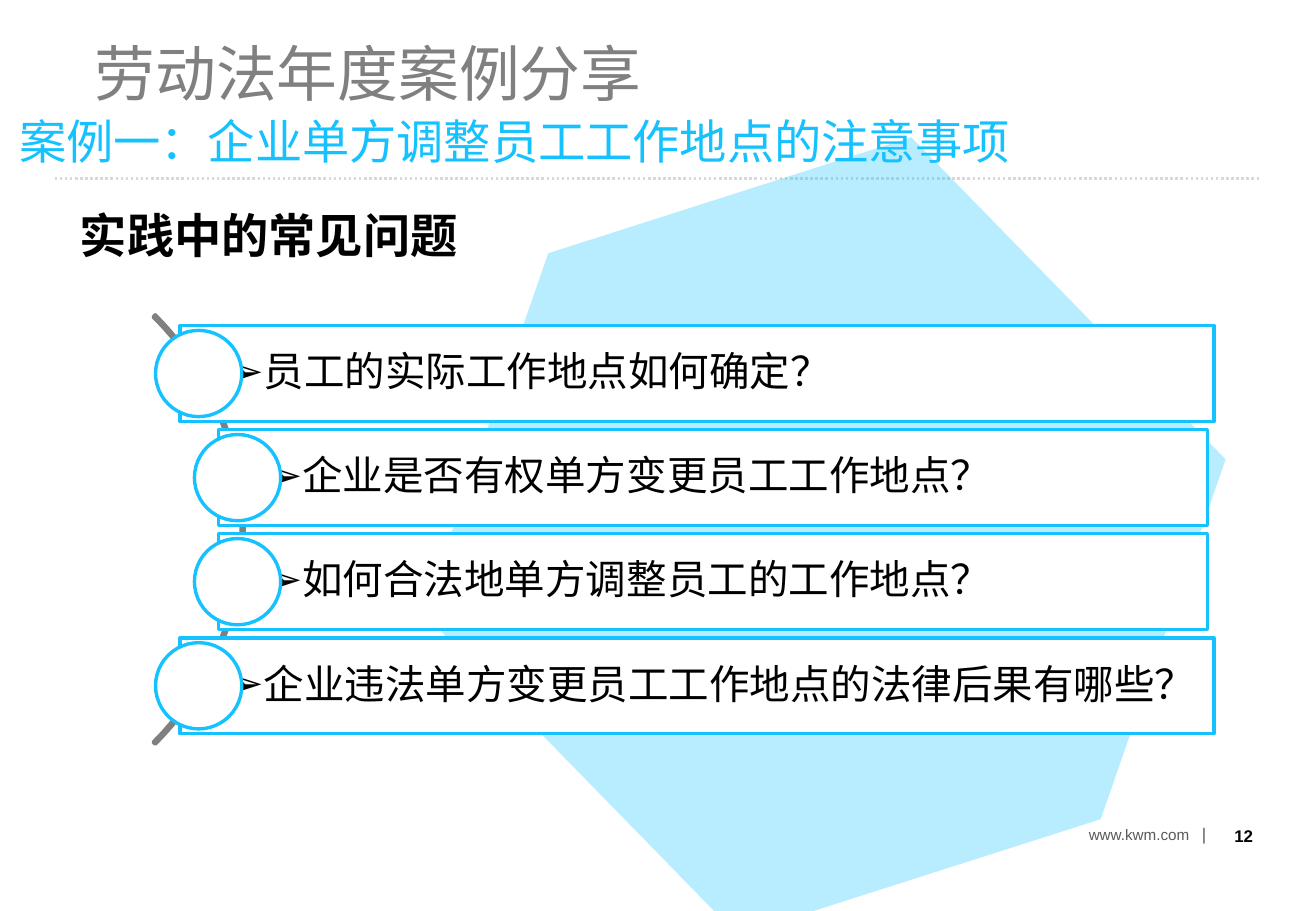
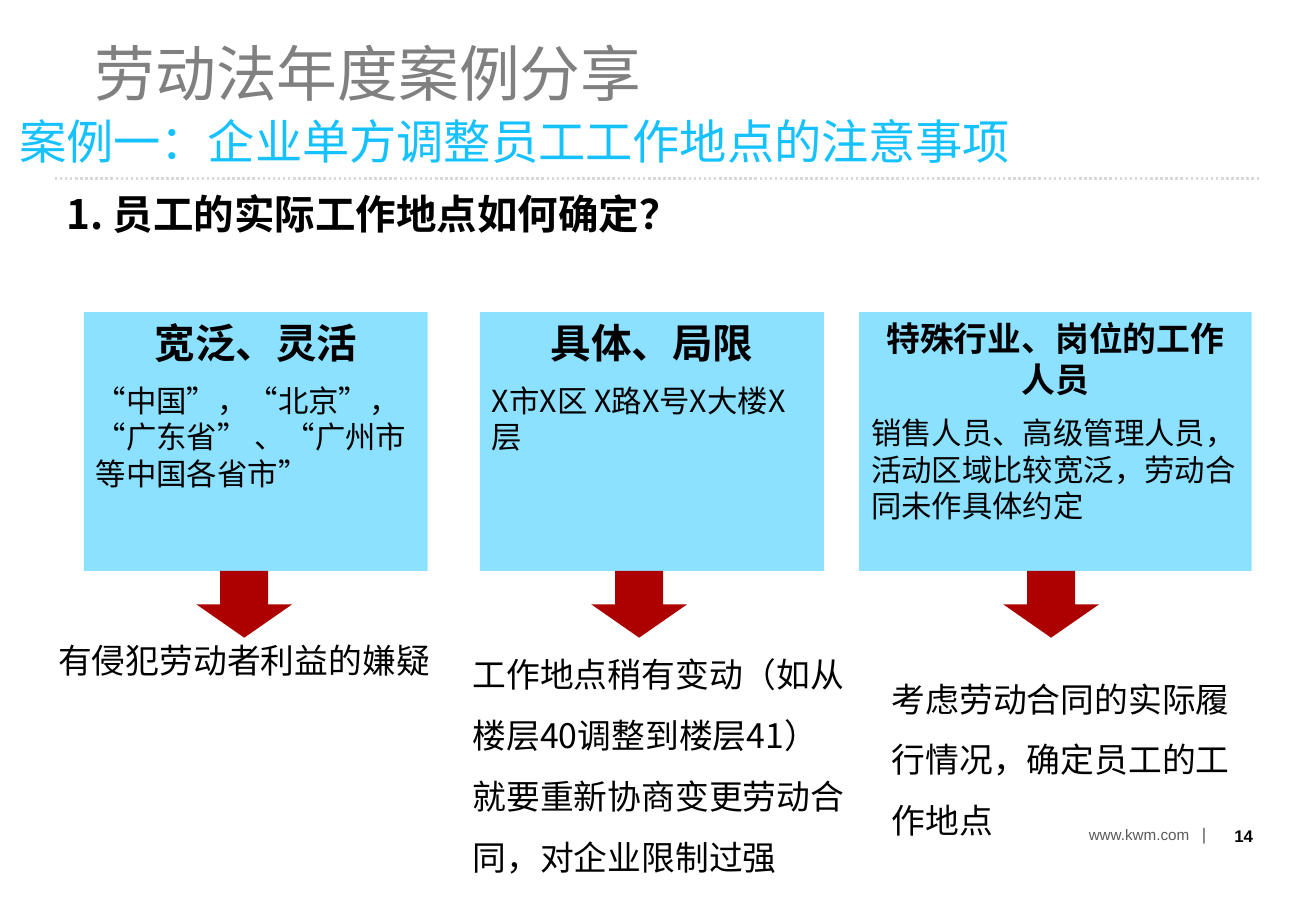
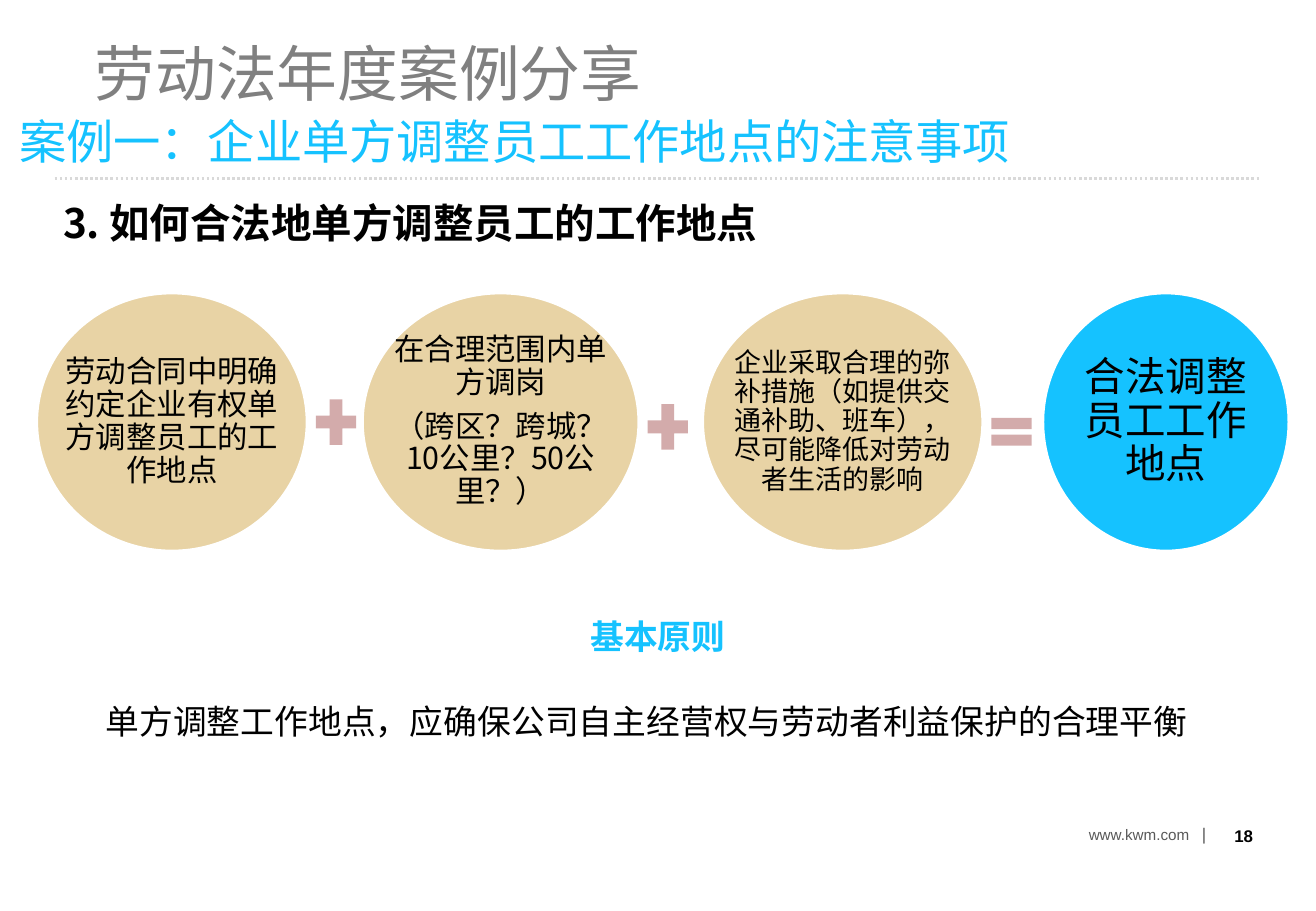
from lxml import etree
from pptx import Presentation
from pptx.dml.color import RGBColor
from pptx.enum.dml import MSO_LINE
from pptx.enum.shapes import MSO_CONNECTOR, MSO_SHAPE
from pptx.enum.text import MSO_ANCHOR, PP_ALIGN
from pptx.oxml.ns import qn
from pptx.util import Inches, Pt

RECTANGLE, OVAL, HEXAGON = MSO_SHAPE.RECTANGLE, MSO_SHAPE.OVAL, MSO_SHAPE.HEXAGON
BLOCK_ARC, DOWN_ARROW = MSO_SHAPE.BLOCK_ARC, MSO_SHAPE.DOWN_ARROW
PLUS, EQUAL = MSO_SHAPE.MATH_PLUS, MSO_SHAPE.MATH_EQUAL
STRAIGHT, DOTTED = MSO_CONNECTOR.STRAIGHT, MSO_LINE.ROUND_DOT
TOP, MIDDLE = MSO_ANCHOR.TOP, MSO_ANCHOR.MIDDLE
LEFT, CENTER, RIGHT = PP_ALIGN.LEFT, PP_ALIGN.CENTER, PP_ALIGN.RIGHT

CJK, LATIN = "Noto Sans CJK SC", "Arial"
BLACK, WHITE, GREY = "000000", "FFFFFF", "808080"
BLUE, PALE_BLUE = "15C2FF", "8BE1FF"
RED, SAND, PINK = "AD0101", "E8D3A5", "D3ABAB"
RULE_GREY, FOOTER_GREY = "D9D9D9", "595959"


def rgb(color):
    return RGBColor.from_string(color)


def apply(target, values):
    for name, value in values.items():
        setattr(target, name, value)


def run(text, size, color=BLACK, bold=False, font=CJK):
    return text, color, {"size": Pt(size), "bold": bold, "name": font}


def para(*runs, bullet=None, tab=None, **layout):
    return {"runs": runs, "bullet": bullet, "tab": tab,
            "layout": {"alignment": LEFT, **layout}}


def add_bullet(properties, bullet):
    indent = Inches(0.25)
    properties.set("marL", str(indent))
    properties.set("indent", str(-indent))
    etree.SubElement(properties, qn("a:buFont"), typeface=LATIN)
    etree.SubElement(properties, qn("a:buChar"), char=bullet)


def add_tab(properties, position):
    stops = etree.SubElement(properties, qn("a:tabLst"))
    etree.SubElement(stops, qn("a:tab"), pos=str(Inches(position)), algn="l")


def write(shape, paragraphs, anchor=TOP, insets=(0.1, 0.05, 0.1, 0.05)):
    frame = shape.text_frame
    sides = ("margin_left", "margin_top", "margin_right", "margin_bottom")
    apply(frame, {"word_wrap": True, "vertical_anchor": anchor,
                  **dict(zip(sides, map(Inches, insets)))})
    for index, content in enumerate(paragraphs):
        paragraph = frame.add_paragraph() if index else frame.paragraphs[0]
        properties = paragraph._p.get_or_add_pPr()
        if content["bullet"]:
            add_bullet(properties, content["bullet"])
        if content["tab"]:
            add_tab(properties, content["tab"])
        apply(paragraph, content["layout"])
        for text, color, font in content["runs"]:
            piece = paragraph.add_run()
            piece.text = text
            apply(piece.font, font)
            piece.font.color.rgb = rgb(color)
            etree.SubElement(piece._r.get_or_add_rPr(), qn("a:ea"),
                             typeface=font["name"])


def add_text(slide, box, *paragraphs, **frame):
    write(slide.shapes.add_textbox(*map(Inches, box)), paragraphs, **frame)


def add_block(slide, preset, box, fill=None, line=None):
    block = slide.shapes.add_shape(preset, *map(Inches, box))
    block.shadow.inherit = False
    if fill:
        block.fill.solid()
        block.fill.fore_color.rgb = rgb(fill)
    else:
        block.fill.background()
    if line:
        block.line.color.rgb = rgb(line)
        block.line.width = Pt(2)
    else:
        block.line.fill.background()
    return block


def add_frame(slide, number):
    rule = slide.shapes.add_connector(
        STRAIGHT, *map(Inches, (0.45, 1.47, 10.38, 1.47)))
    rule.line.color.rgb = rgb(RULE_GREY)
    apply(rule.line, {"width": Pt(1.5), "dash_style": DOTTED})
    etree.SubElement(rule._element.spPr, qn("a:effectLst"))
    add_text(slide, (9.94, 6.68, 0.47, 0.4),
             para(run(str(number), 10, bold=True, font=LATIN), alignment=RIGHT),
             anchor=MIDDLE)
    add_text(slide, (8.96, 6.78, 0.98, 0.17),
             para(run("www.kwm.com", 9, FOOTER_GREY, font=LATIN),
                  run("\t|", 10, FOOTER_GREY, font=LATIN), tab=0.93),
             insets=(0, 0, 0, 0))
    add_text(slide, (0.68, 0.31, 4.75, 0.65),
             para(run("劳动法年度案例分享", 36, GREY), line_spacing=0.9))
    add_text(slide, (0.06, 0.93, 8.45, 0.53),
             para(run("案例一：企业单方调整员工工作地点的注意事项", 28, BLUE),
                  line_spacing=0.9))


def add_heading(slide, box, text, size):
    add_text(slide, box, para(run(text, size, bold=True), line_spacing=0.9))


def add_hexagon(slide, box):
    hexagon = add_block(slide, HEXAGON, box, BLUE)
    hexagon.rotation = 45.7
    color = hexagon.fill._xPr.find(".//" + qn("a:srgbClr"))
    etree.SubElement(color, qn("a:alpha"), val="30000")


def add_arc(slide, box):
    arc = add_block(slide, BLOCK_ARC, box, line=GREY)
    for index, value in enumerate((189, 27, 0.005)):
        arc.adjustments[index] = value


def add_question(slide, box, question):
    left, top, _, height = box
    bar = add_block(slide, RECTANGLE, box, WHITE, BLUE)
    write(bar, [para(run(question, 24), bullet="➢", line_spacing=0.9)],
          anchor=MIDDLE, insets=(0.41, 0.07, 0.07, 0.07))
    diameter = 0.71
    add_block(slide, OVAL,
              (left - 0.2, top + (height - diameter) / 2, diameter, diameter),
              WHITE, BLUE)


def add_questions_slide(slide):
    add_heading(slide, (0.56, 1.7, 4.09, 0.53), "实践中的常见问题", 28)
    add_hexagon(slide, (3.53, 1.61, 6.51, 5.61))
    add_arc(slide, (-2.99, 1.86, 5, 5))
    outer, inner = (1.48, 8.51), (1.8, 8.14)
    questions = (
        (outer, "员工的实际工作地点如何确定？"),
        (inner, "企业是否有权单方变更员工工作地点？"),
        (inner, "如何合法地单方调整员工的工作地点？"),
        (outer, "企业违法单方变更员工工作地点的法律后果有哪些？"),
    )
    top, height, gap = 2.68, 0.79, 0.067
    for index, ((left, width), question) in enumerate(questions):
        add_question(slide, (left, top + index * (height + gap), width, height),
                     question)


def add_agreement(slide, box, title, title_size, body, arrow_center):
    _, top, _, height = box
    card = add_block(slide, RECTANGLE, box, PALE_BLUE)
    write(card, [para(run(title, title_size, bold=True), alignment=CENTER),
                 para(run(body, 18), space_before=Pt(9))])
    arrow_width = 0.79
    add_block(slide, DOWN_ARROW,
              (arrow_center - arrow_width / 2, top + height, arrow_width, 0.55), RED)


def add_agreements_slide(slide):
    add_heading(slide, (0.45, 1.55, 5.29, 0.46), "1. 员工的实际工作地点如何确定？", 24)
    agreements = (
        (0.69, 2.83, "宽泛、灵活", 24,
         "“中国”，“北京”，“广东省” 、“广州市等中国各省市”", 2.01),
        (3.95, 2.83, "具体、局限", 24, "X市X区 X路X号X大楼X层", 5.26),
        (7.07, 3.23, "特殊行业、岗位的工作人员", 20,
         "销售人员、高级管理人员，活动区域比较宽泛，劳动合同未作具体约定", 8.65),
    )
    for left, width, *content in agreements:
        add_agreement(slide, (left, 2.57, width, 2.13), *content)
    consequences = (
        ((0.38, 5.26, 3.31, 0.4), 0.9, "有侵犯劳动者利益的嫌疑"),
        ((3.79, 5.17, 3.31, 2.06), 1.5,
         "工作地点稍有变动（如从楼层40调整到楼层41）就要重新协商变更劳动合同，对企业限制过强"),
        ((7.24, 5.37, 3.06, 1.56), 1.5,
         "考虑劳动合同的实际履行情况，确定员工的工作地点"),
    )
    for box, spacing, consequence in consequences:
        add_text(slide, box, para(run(consequence, 20), line_spacing=spacing))


def add_condition(slide, box, fill, size, *lines):
    add_block(slide, OVAL, box, fill, WHITE)
    paragraphs = [para(run(line, size), alignment=CENTER, line_spacing=0.9,
                       space_before=Pt(0.35 * size if index else 0))
                  for index, line in enumerate(lines)]
    add_text(slide, box, *paragraphs, anchor=MIDDLE, insets=(0.23,) * 4)


def add_formula_slide(slide):
    add_heading(slide, (0.42, 1.63, 8.62, 0.46), "3. 如何合法地单方调整员工的工作地点", 24)
    add_text(slide, (0.77, 5.01, 9.29, 1.15),
             para(run("基本原则", 20, BLUE, True), alignment=CENTER,
                  line_spacing=Pt(25), space_after=Pt(25)),
             para(run("单方调整工作地点，应确保公司自主经营权与劳动者利益保护的合理平衡", 20),
                  line_spacing=Pt(25)))
    conditions = (
        (0.3, 2.23, SAND, 18, "劳动合同中明确约定企业有权单方调整员工的工作地点"),
        (2.98, 2.28, SAND, 18, "在合理范围内单方调岗",
         "（跨区？跨城？10公里？50公里？）"),
        (5.78, 2.31, SAND, 16,
         "企业采取合理的弥补措施（如提供交通补助、班车），尽可能降低对劳动者生活的影响"),
        (8.58, 2.03, BLUE, 24, "合法调整员工工作地点"),
    )
    for left, width, *content in conditions:
        add_condition(slide, (left, 2.41, width, 2.13), *content)
    operators = ((PLUS, 3.22, 0.51), (PLUS, 3.26, 0.51), (EQUAL, 3.36, 0.39))
    for (left, width, *_), (sign, top, height) in zip(conditions, operators):
        add_block(slide, sign, (left + width + 0.01, top, 0.45, height), PINK)


def main():
    deck = Presentation()
    apply(deck, {"slide_width": Inches(10.83), "slide_height": Inches(7.5)})
    blank = deck.slide_layouts[6]
    pages = ((12, add_questions_slide), (14, add_agreements_slide),
             (18, add_formula_slide))
    for number, add_content in pages:
        slide = deck.slides.add_slide(blank)
        add_frame(slide, number)
        add_content(slide)
    deck.save("out.pptx")


if __name__ == "__main__":
    main()
